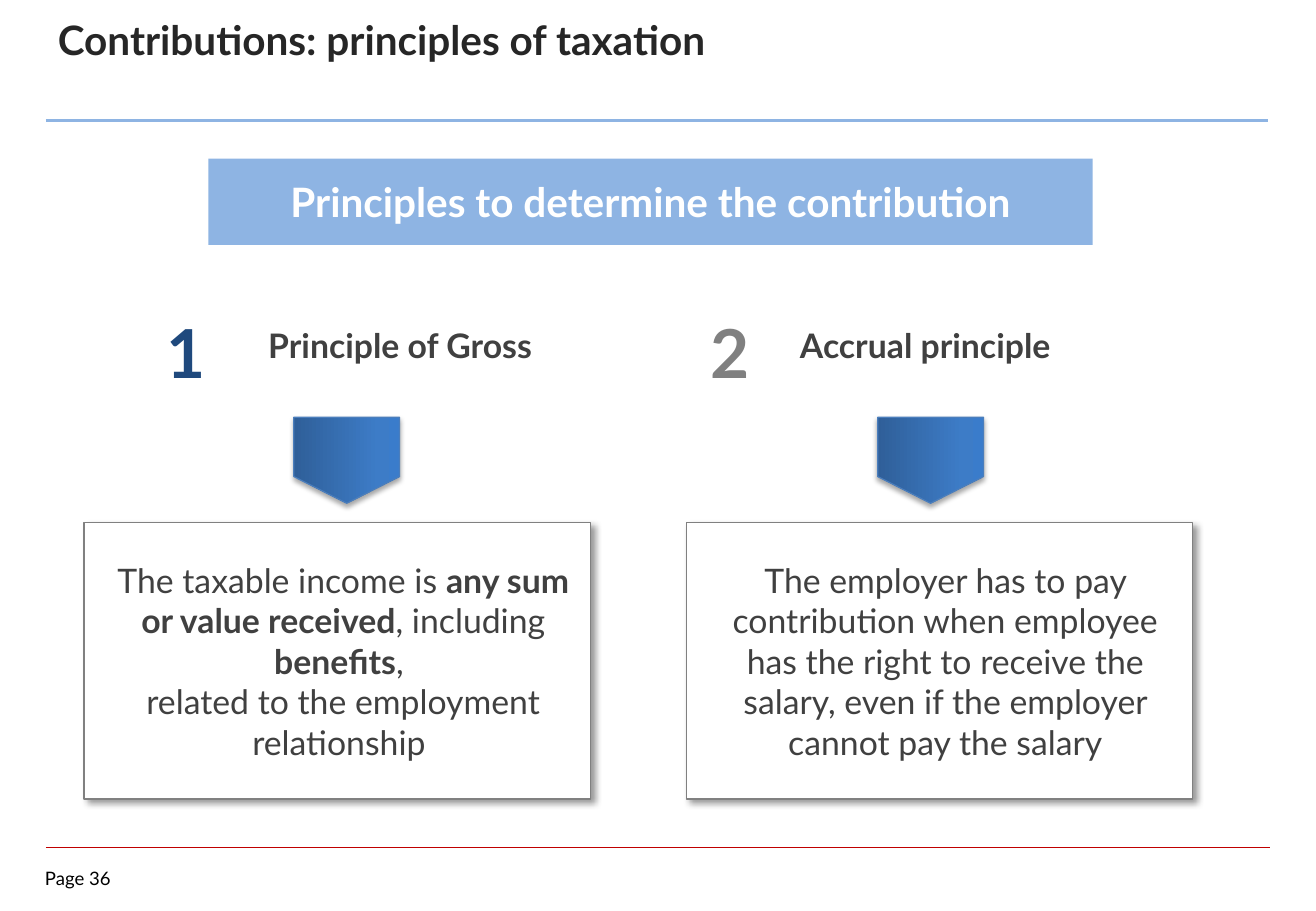
from lxml.etree import SubElement
from pptx import Presentation
from pptx.dml.color import RGBColor as RGB
from pptx.enum.shapes import MSO_CONNECTOR as LINK, MSO_SHAPE as SHAPE
from pptx.enum.text import MSO_ANCHOR as ANCHOR, MSO_AUTO_SIZE as FIT, PP_ALIGN as ALIGN
from pptx.oxml import parse_xml
from pptx.oxml.ns import nsdecls, qn
from pptx.util import Cm, Pt

COLORS = {
    "black": "000000", "white": "FFFFFF", "title": "262626", "body": "404040",
    "gray": "808080", "navy": "1F497D", "sky": "8EB4E3", "red": "C00000",
    "edge": "4B7EBC", "dark": "2F5F99", "mid": "3D7CC7", "light": "3A7CCB",
}


def write(shape, paras, size=20, color="body", bold=False, align=ALIGN.CENTER,
          anchor=ANCHOR.MIDDLE, pad=(0.25, 0.13), indent=0, space=None):
    """Fill a shape with paragraphs, each a list of (text, bold) runs or a string."""
    frame = shape.text_frame
    frame.word_wrap = True
    frame.auto_size = FIT.NONE
    frame.vertical_anchor = anchor
    frame.margin_left = frame.margin_right = Cm(pad[0])
    frame.margin_top = frame.margin_bottom = Cm(pad[1])
    for i, runs in enumerate(paras):
        para = frame.paragraphs[0] if i == 0 else frame.add_paragraph()
        para.alignment = align
        para.space_before = Pt(0)
        if space:
            para.line_spacing = space
        if indent:
            para._p.get_or_add_pPr().set("marL", str(Cm(indent)))
        for text, strong in [(runs, bold)] if isinstance(runs, str) else runs:
            run = para.add_run()
            run.text = text
            font = run.font
            font.name, font.size, font.bold = "Lato", Pt(size), strong
            font.color.rgb = RGB.from_string(COLORS[color])


def block(kind, box, fill, edge=None, shadow=None):
    """Add a shape; shadow is (alpha %, blur pt, offset pt, angle)."""
    shape = slide.shapes.add_shape(kind, *map(Cm, box))
    shape.shadow.inherit = False
    shape.fill.solid()
    shape.fill.fore_color.rgb = RGB.from_string(COLORS[fill])
    if edge:
        shape.line.color.rgb = RGB.from_string(COLORS[edge])
        shape.line.width = Pt(0.75)
    else:
        shape.line.fill.background()
    if shadow:
        alpha, blur, dist, angle = shadow
        effect = shape._element.spPr.find(qn("a:effectLst"))
        outer = SubElement(effect, qn("a:outerShdw"), blurRad=str(Pt(blur)),
                           dist=str(Pt(dist)), dir=str(angle * 60000), rotWithShape="0")
        tint = SubElement(outer, qn("a:srgbClr"), val=COLORS["black"])
        SubElement(tint, qn("a:alpha"), val=str(alpha * 1000))
    return shape


deck = Presentation()
deck.slide_width, deck.slide_height = Cm(27.52), Cm(19.05)
slide = deck.slides.add_slide(deck.slide_layouts[5])

# Title
title = slide.shapes.title
title.left, title.top, title.width, title.height = map(Cm, (0.96, 0.32, 19.6, 1.8))
write(title, ["Contributions: principles of taxation"], size=24, color="title",
      bold=True, align=ALIGN.LEFT, anchor=ANCHOR.TOP, pad=(0.25, 0))

# Rules above and below the content
for y, end, color, width in [(2.52, 26.52, "sky", 1.5), (17.72, 26.56, "red", 1)]:
    rule = slide.shapes.add_connector(LINK.STRAIGHT, Cm(0.96), Cm(y), Cm(end), Cm(y))
    rule.line.color.rgb = RGB.from_string(COLORS[color])
    rule.line.width = Pt(width)
    SubElement(rule._element.spPr, qn("a:effectLst"))

# Page number
page = slide.shapes.add_textbox(Cm(0.94), Cm(18.14), Cm(1.85), Cm(0.56))
write(page, ["Page 36"], size=11, color="black", align=ALIGN.LEFT,
      anchor=ANCHOR.TOP, pad=(0, 0))

# Banner
banner = block(SHAPE.RECTANGLE, (4.36, 3.32, 18.49, 1.8), "sky")
write(banner, ["Principles to determine the contribution"], size=24, color="white", bold=True)

# Two principles: number, heading, arrow and card
gross = [
    [("The taxable income is ", False), ("any sum or value received", True),
     (", including ", False), ("benefits", True), (", ", False)],
    "related to the employment relationship ",
]
accrual = ["The employer has to pay contribution when employee has the right to "
           "receive the salary, even if the employer cannot pay the salary"]
parts = [
    ("1", "navy", 2.96, "Principle of Gross", 5.36, 6.35, 1.76, gross),
    ("2", "gray", 14.35, "Accrual principle", 16.48, 18.56, 14.35, accrual),
]
for mark, color, mark_x, name, name_x, arrow_x, card_x, body in parts:
    head = slide.shapes.add_textbox(Cm(name_x), Cm(6.67), Cm(6.6), Cm(1.11))
    write(head, [name], bold=True, align=ALIGN.LEFT)
    digit = slide.shapes.add_textbox(Cm(mark_x), Cm(6.15), Cm(1.85), Cm(1.57))
    write(digit, [mark], size=40, color=color, bold=True, space=1.5)

    card = block(SHAPE.RECTANGLE, (card_x, 10.92, 10.59, 5.79), "white", "gray", (40, 4, 3, 45))
    write(card, body, indent=0.25)

    arrow = block(SHAPE.PENTAGON, (arrow_x, 8.52, 1.8, 2.21), "mid", "edge", (35, 3.1, 1.8, 90))
    arrow.rotation = 90
    arrow.adjustments[0] = 0.31
    stops = "".join(
        f'<a:gs pos="{pos * 1000}"><a:srgbClr val="{COLORS[shade]}"/></a:gs>'
        for pos, shade in [(0, "dark"), (80, "mid"), (100, "light")])
    grad = parse_xml(f'<a:gradFill {nsdecls("a")} rotWithShape="1"><a:gsLst>{stops}</a:gsLst>'
                     '<a:lin ang="16200000" scaled="0"/></a:gradFill>')
    props = arrow._element.spPr
    props.replace(props.find(qn("a:solidFill")), grad)

deck.save("out.pptx")
